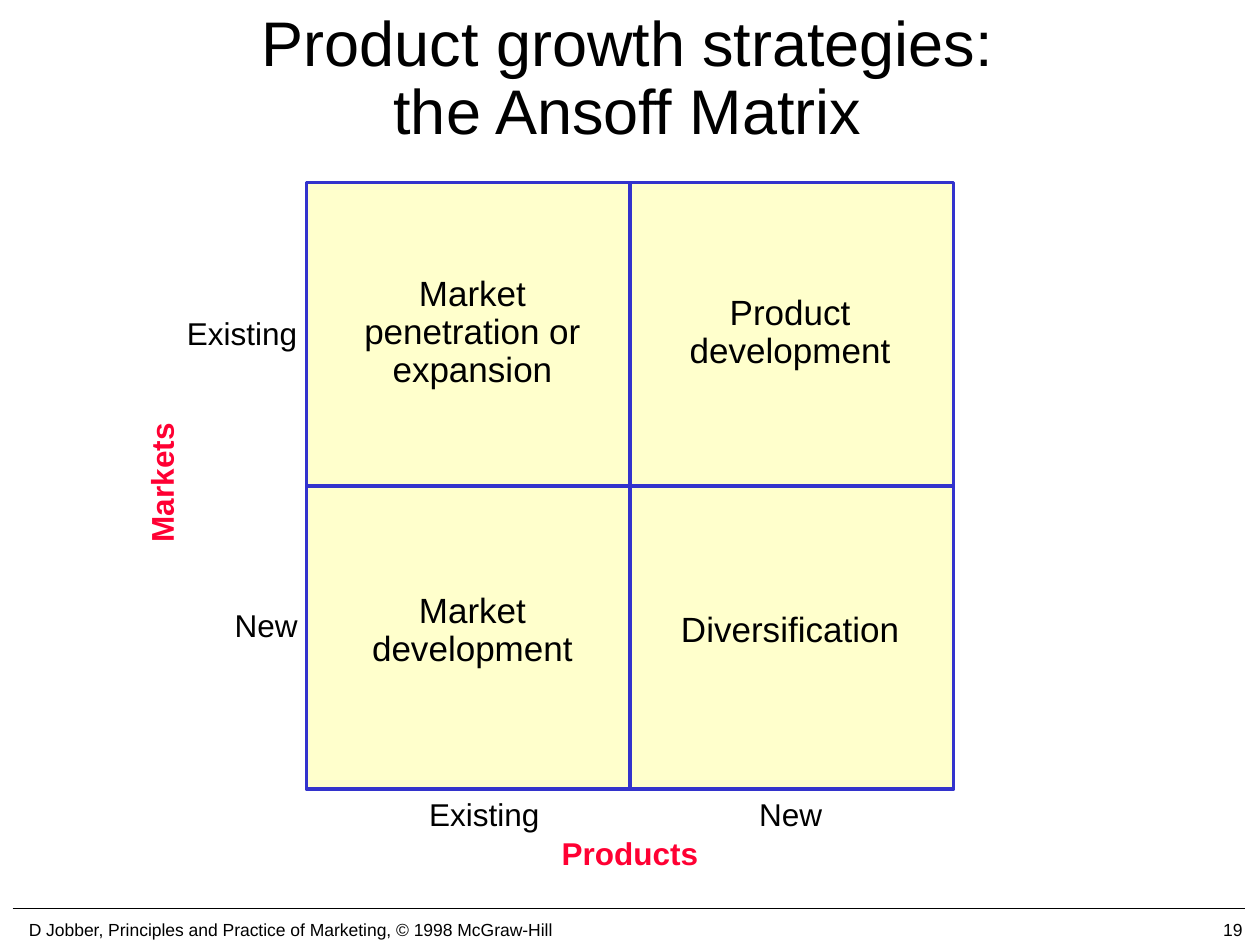
import pptx
import pptx.dml.color
import pptx.enum.shapes
import pptx.enum.text
import pptx.oxml
import pptx.util
from pptx.util import Pt

# Content
TITLE = "Product growth strategies:\nthe Ansoff Matrix"
STRATEGIES = [
    # text, column, row, width
    ("Market\npenetration or\nexpansion", 0, 0, 138),
    ("Product\ndevelopment", 1, 0, 130),
    ("Market\ndevelopment", 0, 1, 130),
    ("Diversification", 1, 1, 140),
]
AXIS_STEPS = [("Existing", 78.5), ("New", 51)]
PRODUCTS, MARKETS = "Products", "Markets"
FOOTER = "D Jobber, Principles and Practice of Marketing, © 1998 McGraw-Hill"
PAGE = "19"

THEME = {
    "font": "Arial", "text": "000000", "accent": "FF0033",
    "cell": "FFFFCC", "grid": "3333CC",
    "title": 36, "strategy": 20, "label": 18, "footer": 10,
}

# Layout, in points
MATRIX = (175, 104.4, 370, 346.4)
COLUMN_CENTRES, ROW_CENTRES = (270, 451.5), (190.4, 360.4)
PRODUCT_CENTRES, MARKET_CENTRES = (276.8, 451.8), (190.4, 356.8)
MARKET_RIGHT, PRODUCT_Y = 177.5, 464.8
LABEL_HEIGHT = 29.5

ALIGN = pptx.enum.text.PP_ALIGN


def colour(name):
    return pptx.dml.color.RGBColor.from_string(THEME[name])


def write(shape, text, *, size, color="text", bold=False,
          align=ALIGN.CENTER, spacing=None, wrap=False):
    frame = shape.text_frame
    frame.word_wrap = wrap
    frame.auto_size = pptx.enum.text.MSO_AUTO_SIZE.NONE
    frame.vertical_anchor = pptx.enum.text.MSO_ANCHOR.MIDDLE
    frame.margin_left = frame.margin_right = Pt(7.2)
    frame.margin_top = frame.margin_bottom = Pt(3.6)
    paragraph = frame.paragraphs[0]
    paragraph.text = text
    paragraph.alignment = align
    if spacing:
        paragraph.line_spacing = spacing
    for run in paragraph.runs:
        run.font.name = THEME["font"]
        run.font.size = Pt(THEME[size])
        run.font.bold = bold
        run.font.color.rgb = colour(color)


def add_text(slide, text, x, y, width, height, **style):
    """Place a text box by its centre."""
    box = slide.shapes.add_textbox(Pt(x - width / 2), Pt(y - height / 2), Pt(width), Pt(height))
    write(box, text, **style)
    return box


def add_line(slide, x1, y1, x2, y2, color, weight):
    line = slide.shapes.add_connector(
        pptx.enum.shapes.MSO_CONNECTOR.STRAIGHT, Pt(x1), Pt(y1), Pt(x2), Pt(y2))
    line.line.color.rgb = colour(color)
    line.line.width = Pt(weight)
    line._element.spPr.append(pptx.oxml.parse_xml(
        '<a:effectLst xmlns:a="http://schemas.openxmlformats.org/drawingml/2006/main"/>'))
    return line


def main():
    deck = pptx.Presentation()
    deck.slide_width, deck.slide_height = Pt(720), Pt(540)
    slide = deck.slides.add_slide(deck.slide_layouts[5])

    # Footer
    add_line(slide, 7.2, 519.1, 711.4, 519.1, "text", 1)
    add_text(slide, FOOTER, 166, 531, 332, 18, size="footer")
    add_text(slide, PAGE, 642.2, 531, 149.8, 18, size="footer", align=ALIGN.RIGHT)

    # Title
    title = slide.shapes.title
    title.left, title.top, title.width, title.height = Pt(52.6), Pt(0.7), Pt(612), Pt(90)
    write(title, TITLE, size="title", spacing=0.9, wrap=True)

    # Matrix with its two dividers
    left, top, width, height = MATRIX
    matrix = slide.shapes.add_shape(
        pptx.enum.shapes.MSO_SHAPE.RECTANGLE, Pt(left), Pt(top), Pt(width), Pt(height))
    matrix.shadow.inherit = False
    matrix.fill.solid()
    matrix.fill.fore_color.rgb = colour("cell")
    matrix.line.color.rgb = colour("grid")
    matrix.line.width = Pt(2)
    middle_x, middle_y = left + width / 2, top + height / 2
    for ends, sides in (
        ((left, middle_y, left + width, middle_y), (1, 3)),
        ((middle_x, top, middle_x, top + height), (0, 2)),
    ):
        divider = add_line(slide, *ends, "grid", 2)
        divider.begin_connect(matrix, sides[0])
        divider.end_connect(matrix, sides[1])

    # Strategies
    for text, column, row, box_width in STRATEGIES:
        lines = text.count("\n") + 1
        add_text(slide, text, COLUMN_CENTRES[column], ROW_CENTRES[row],
                 box_width, 7.9 + 21.6 * lines, size="strategy", spacing=0.9)

    # Axis steps: markets down the left, products along the bottom
    for (step, box_width), x, y in zip(AXIS_STEPS, PRODUCT_CENTRES, MARKET_CENTRES):
        add_text(slide, step, MARKET_RIGHT - box_width / 2, y, box_width, LABEL_HEIGHT, size="label")
        add_text(slide, step, x, PRODUCT_Y, box_width, LABEL_HEIGHT, size="label")

    # Axis names
    axis = {"size": "label", "color": "accent", "bold": True}
    add_text(slide, PRODUCTS, middle_x, 487.2, 93.6, LABEL_HEIGHT, **axis)
    markets = add_text(slide, MARKETS, 92.2, 275.8, 82, LABEL_HEIGHT, **axis)
    markets.rotation = 270

    deck.save("out.pptx")


if __name__ == "__main__":
    main()
